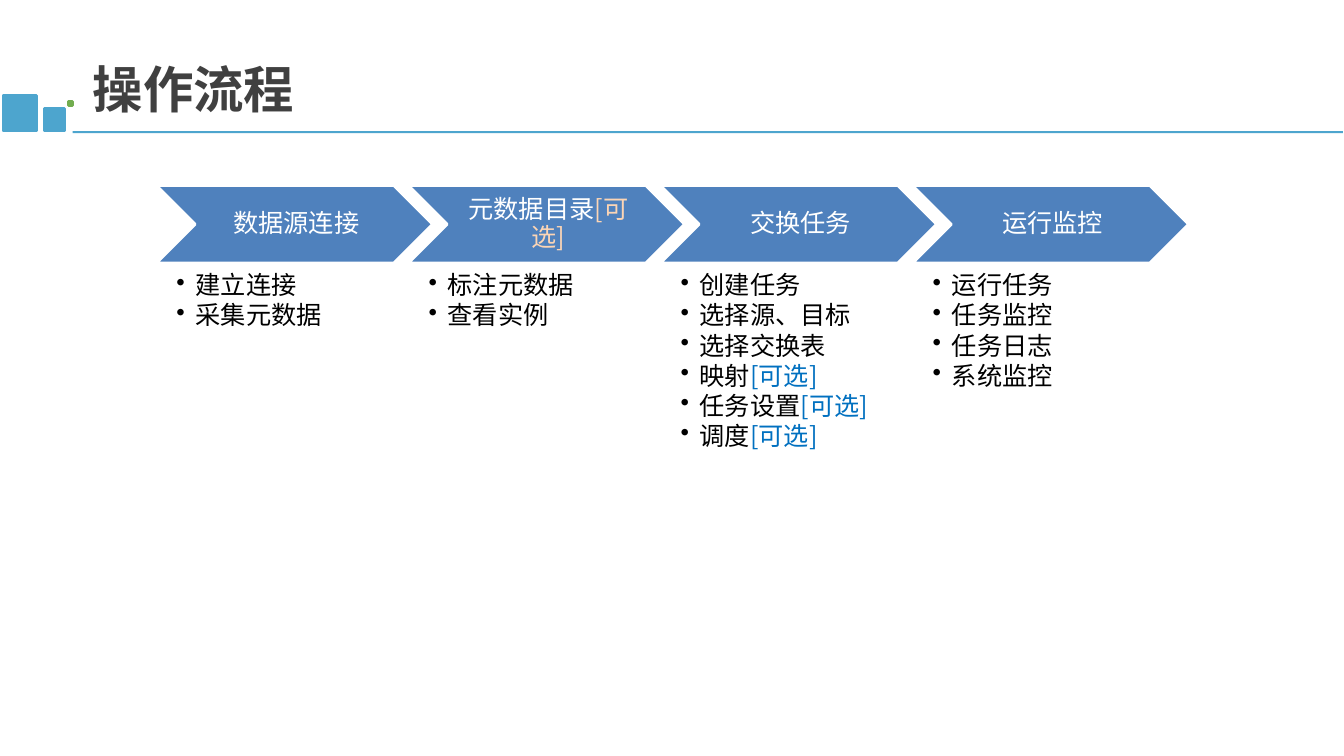
from lxml.etree import SubElement
from pptx import Presentation
from pptx.dml.color import RGBColor
from pptx.enum.shapes import MSO_SHAPE
from pptx.enum.text import MSO_ANCHOR, PP_ALIGN
from pptx.oxml.ns import qn
from pptx.util import Inches, Pt

# Content: each step has a label and tasks; OPTIONAL marks the coloured suffix
TITLE = "操作流程"
OPTIONAL = "[可选]"
STEPS = [
    ("数据源连接", ["建立连接", "采集元数据"]),
    ("元数据目录[可选]", ["标注元数据", "查看实例"]),
    ("交换任务", ["创建任务", "选择源、目标", "选择交换表",
              "映射[可选]", "任务设置[可选]", "调度[可选]"]),
    ("运行监控", ["运行任务", "任务监控", "任务日志", "系统监控"]),
]
# Header decoration: left, top, width, height, colour, outline width
DECORATION = [
    (0.72, 1.3, 12.6, 0.02, "4DA5CE", 0),
    (0.44, 1.08, 0.2, 0.22, "4DA5CE", 2),
    (0.03, 0.95, 0.33, 0.35, "4DA5CE", 2),
    (0.68, 1.01, 0.04, 0.04, "72AD4F", 2),
]
BODY_FONT = "Noto Sans CJK SC"
STEP_LEFT, STEP_TOP, STEP_PITCH = 1.55, 1.84, 2.5
STEP_WIDTH, STEP_HEIGHT = 2.74, 0.77


def color(value):
    return RGBColor.from_string(value)


def add_block(page, preset, area, fill, line, line_width):
    shape = page.shapes.add_shape(preset, *map(Inches, area))
    shape.shadow.inherit = False
    shape.fill.solid()
    shape.fill.fore_color.rgb = color(fill)
    if line_width:
        shape.line.color.rgb = color(line)
        shape.line.width = Pt(line_width)
    else:
        shape.line.fill.background()


def add_frame(page, area, insets, anchor):
    frame = page.shapes.add_textbox(*map(Inches, area)).text_frame
    frame.word_wrap = True
    frame.vertical_anchor = anchor
    (frame.margin_left, frame.margin_top,
     frame.margin_right, frame.margin_bottom) = map(Inches, insets)
    return frame


def set_font(para, name, size, value, bold=False):
    para.font.name = name
    para.font.size = Pt(size)
    para.font.bold = bold
    para.font.color.rgb = color(value)


def add_bullet(para):
    properties = para._p.get_or_add_pPr()
    properties.set("marL", str(Inches(0.39)))
    properties.set("indent", str(Inches(-0.19)))
    SubElement(properties, qn("a:buChar")).set("char", "•")


def write_text(para, text, value, optional_value):
    para.line_spacing = 0.9
    set_font(para, BODY_FONT, 18, value)
    para.add_run().text = text.removesuffix(OPTIONAL)
    if text.endswith(OPTIONAL):
        span = para.add_run()
        span.text = OPTIONAL
        span.font.color.rgb = color(optional_value)


deck = Presentation()
deck.slide_width, deck.slide_height = Inches(13.33), Inches(7.5)
page = deck.slides.add_slide(deck.slide_layouts[6])

# Header
for *area, fill, line_width in DECORATION:
    add_block(page, MSO_SHAPE.RECTANGLE, area, fill, fill, line_width)
frame = add_frame(page, (0.82, 0.48, 11.85, 0.75), (0.1, 0.05, 0.1, 0.05),
                  MSO_ANCHOR.BOTTOM)
title = frame.paragraphs[0]
title.add_run().text = TITLE
set_font(title, "Arial", 36, "404040", bold=True)

# Process steps with their task lists
for index, (label, tasks) in enumerate(STEPS):
    left = STEP_LEFT + index * STEP_PITCH
    add_block(page, MSO_SHAPE.CHEVRON,
              (left, STEP_TOP, STEP_WIDTH, STEP_HEIGHT), "4F81BD", "FFFFFF", 2)
    frame = add_frame(page, (left + 0.38, STEP_TOP, 1.97, STEP_HEIGHT),
                      (0.08, 0.03, 0.03, 0.03), MSO_ANCHOR.MIDDLE)
    heading = frame.paragraphs[0]
    heading.alignment = PP_ALIGN.CENTER
    write_text(heading, label, "FFFFFF", "FCD5B5")

    frame = add_frame(page, (left, 2.71, 2.19, 2.65), (0, 0, 0, 0),
                      MSO_ANCHOR.TOP)
    for number, task in enumerate(tasks):
        para = frame.add_paragraph() if number else frame.paragraphs[0]
        add_bullet(para)
        para.space_after = Pt(2)
        write_text(para, task, "000000", "0070C0")

deck.save("out.pptx")
